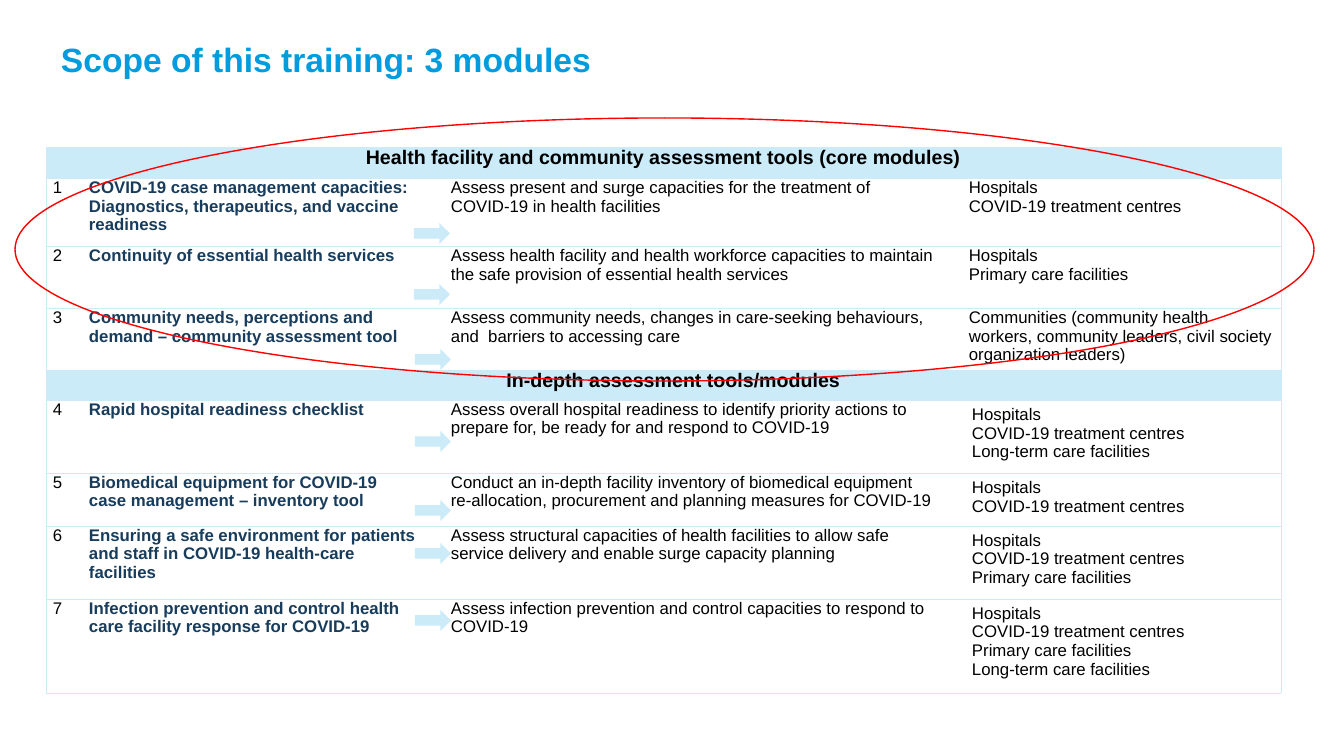
from pptx import Presentation
from pptx import util as u
from pptx.dml.color import RGBColor
from pptx.enum import shapes, text
from pptx.oxml.ns import qn
from lxml import etree

SKY = RGBColor(0x00, 0x9C, 0xDE)
PALE = RGBColor(0xCC, 0xEB, 0xF8)
NAVY = RGBColor(0x18, 0x3C, 0x5C)
BLACK = RGBColor(0x00, 0x00, 0x00)
RED = RGBColor(0xFF, 0x00, 0x00)

COLS = [36, 342, 518, 339]
ROWS = [31, 68, 62, 62, 30, 73, 53, 73, 94]
ARROWS = [(414, 223), (414, 284), (415, 349), (415, 431),
          (415, 500), (415, 543), (415, 610)]

CORE = "Health facility and community assessment tools (core modules)"
DEPTH = "In-depth assessment tools/modules"
MODULES = [
    ("COVID-19 case management capacities: Diagnostics, therapeutics, and vaccine readiness",
     "Assess present and surge capacities for the treatment of COVID-19 in health facilities",
     "Hospitals\nCOVID-19 treatment centres"),
    ("Continuity of essential health services",
     "Assess health facility and health workforce capacities to maintain "
     "the safe provision of essential health services",
     "Hospitals\nPrimary care facilities"),
    ("Community needs, perceptions and demand – community assessment tool",
     "Assess community needs, changes in care-seeking behaviours, and  barriers to accessing care",
     "Communities (community health workers, community leaders, "
     "civil society organization leaders)"),
    ("Rapid hospital readiness checklist",
     "Assess overall hospital readiness to identify priority actions to "
     "prepare for, be ready for and respond to COVID-19",
     "Hospitals\nCOVID-19 treatment centres\nLong-term care facilities"),
    ("Biomedical equipment for COVID-19 case management – inventory tool",
     "Conduct an in-depth facility inventory of biomedical equipment "
     "re-allocation, procurement and planning measures for COVID-19",
     "Hospitals\nCOVID-19 treatment centres"),
    ("Ensuring a safe environment for patients and staff in COVID-19 health-care facilities",
     "Assess structural capacities of health facilities to allow safe "
     "service delivery and enable surge capacity planning",
     "Hospitals\nCOVID-19 treatment centres\nPrimary care facilities"),
    ("Infection prevention and control health care facility response for COVID-19",
     "Assess infection prevention and control capacities to respond to COVID-19",
     "Hospitals\nCOVID-19 treatment centres\nPrimary care facilities\nLong-term care facilities"),
]


def px(n):
    return u.Emu(round(n * u.Inches(1) / 100.8))


def write(frame, words, size=12, color=BLACK, bold=False, align=None, indent=0, spacing=None):
    """Fill a text frame, one paragraph per line of words."""
    for i, line in enumerate(words.split("\n")):
        para = frame.add_paragraph() if i else frame.paragraphs[0]
        if indent:
            props = para._p.get_or_add_pPr()
            props.set("marL", str(px(indent)))
            props.set("indent", "0")
        para.alignment = align
        para.line_spacing = spacing
        run = para.add_run()
        run.text = line
        font = run.font
        font.name, font.size, font.bold = "Arial", u.Pt(size), bold
        font.color.rgb = color


def border(cell, sides):
    """Draw thin pale lines on the given sides (of LRTB) and none on the rest."""
    props = cell._tc.get_or_add_tcPr()
    for side in "LRTB":
        line = etree.SubElement(props, qn("a:ln" + side), w=str(u.Pt(0.5)))
        if side in sides:
            fill = etree.SubElement(line, qn("a:solidFill"))
            etree.SubElement(fill, qn("a:srgbClr"), val=str(PALE))
        else:
            etree.SubElement(line, qn("a:noFill"))


class Deck:
    def __init__(self):
        self.file = Presentation()
        self.file.slide_width, self.file.slide_height = px(1344), px(756)
        self.slide = self.file.slides.add_slide(self.file.slide_layouts[6])

    def title(self, words, x, y, w, h):
        frame = self.slide.shapes.add_textbox(px(x), px(y), px(w), px(h)).text_frame
        frame.word_wrap = True
        frame.vertical_anchor = text.MSO_ANCHOR.BOTTOM
        frame.margin_left, frame.margin_right = px(2), px(39)
        frame.margin_top = frame.margin_bottom = 0
        write(frame, words, size=24, color=SKY, bold=True, spacing=0.9)

    def shape(self, kind, x, y, w, h, fill=None, line=None):
        form = self.slide.shapes.add_shape(kind, px(x), px(y), px(w), px(h))
        form.shadow.inherit = False
        if fill is None:
            form.fill.background()
        else:
            form.fill.solid()
            form.fill.fore_color.rgb = fill
        if line is None:
            form.line.fill.background()
        else:
            form.line.color.rgb = line
            form.line.width = u.Pt(1)

    def table(self, x, y):
        grid = self.slide.shapes.add_table(
            len(ROWS), len(COLS), px(x), px(y), px(sum(COLS)), px(sum(ROWS))).table
        grid.first_row = grid.horz_banding = False
        for col, w in zip(grid.columns, COLS):
            col.width = px(w)
        for row, h in zip(grid.rows, ROWS):
            row.height = px(h)
        return grid

    def cell(self, grid, r, c, words, fill=None, inset=True, **form):
        box = grid.cell(r, c)
        if inset:
            box.margin_left = box.margin_right = px(7)
            box.margin_top = box.margin_bottom = 0
        border(box, "TB" + "L" * (c == 0) + "R" * (c == len(COLS) - 1 or box.is_merge_origin))
        if fill is None:
            box.fill.background()
        else:
            box.fill.solid()
            box.fill.fore_color.rgb = fill
        write(box.text_frame, words, **form)

    def band(self, grid, r, words, indent=0):
        """Write a section heading across a whole table row."""
        last = grid.cell(r, len(COLS) - 1)
        grid.cell(r, 0).merge(last)
        border(last, "RTB")
        self.cell(grid, r, 0, words, fill=PALE, size=14, bold=True,
                  align=text.PP_ALIGN.CENTER, indent=indent)


def main():
    deck = Deck()
    deck.title("Scope of this training: 3 modules", 59, 40, 899, 40)
    grid = deck.table(46, 147)
    deck.band(grid, 0, CORE)
    deck.band(grid, 4, DEPTH, indent=20)
    for n, (name, aim, sites) in enumerate(MODULES, 1):
        core = n <= 3
        r = n if core else n + 1
        deck.cell(grid, r, 0, str(n))
        deck.cell(grid, r, 1, name, color=NAVY, bold=True)
        deck.cell(grid, r, 2, aim, indent=20)
        deck.cell(grid, r, 3, sites, indent=20, inset=core)
    deck.shape(shapes.MSO_SHAPE.OVAL, 15, 118, 1299, 263, line=RED)
    for x, y in ARROWS:
        deck.shape(shapes.MSO_SHAPE.RIGHT_ARROW, x, y, 36, 21, fill=PALE)
    deck.file.save("out.pptx")


if __name__ == "__main__":
    main()
